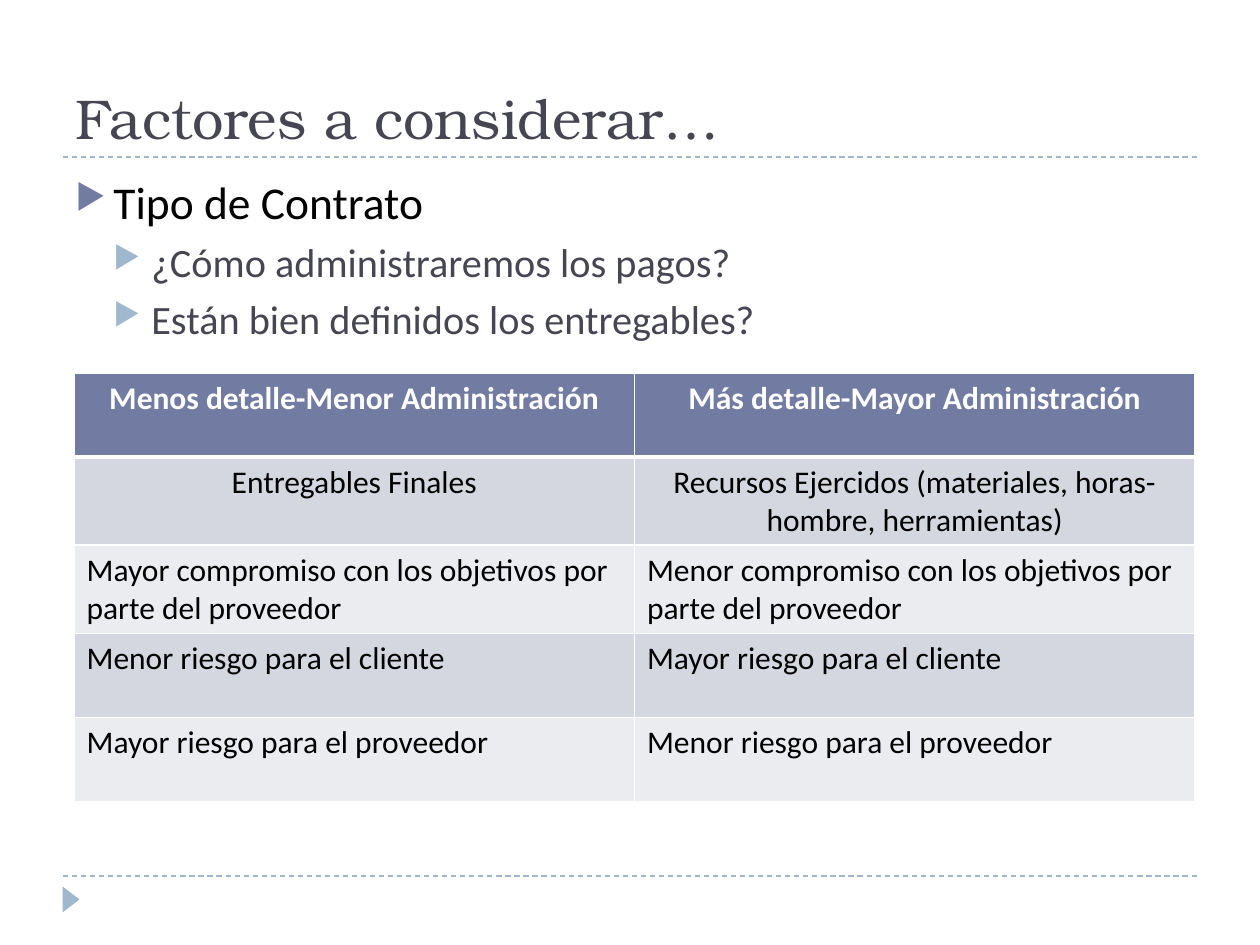
from lxml import etree
from pptx import Presentation
from pptx.dml.color import RGBColor
from pptx.enum.dml import MSO_LINE
from pptx.enum.shapes import MSO_CONNECTOR, MSO_SHAPE
from pptx.enum.text import MSO_ANCHOR, PP_ALIGN
from pptx.oxml.ns import qn
from pptx.util import Pt

EMU_PER_PX = 914400 / 126
STRAIGHT = MSO_CONNECTOR.STRAIGHT
TRIANGLE = MSO_SHAPE.ISOSCELES_TRIANGLE
DASH = MSO_LINE.DASH
BOTTOM = MSO_ANCHOR.BOTTOM
LEFT, CENTER = PP_ALIGN.LEFT, PP_ALIGN.CENTER
TITLE_ONLY = 5

INDIGO, SKY, SLATE = "727CA3", "9FB8CD", "464653"
BLACK, WHITE = "000000", "FFFFFF"
BANDS = ("D5D7E0", "EBECF0")


def px(value):
    return round(value * EMU_PER_PX)


def rgb(color):
    return RGBColor.from_string(color)


class SlideBuilder:
    heading_font = "TeX Gyre Bonum"
    body_font = "Calibri"

    def __init__(self, slide):
        self.slide = slide

    def style(self, paragraph, size, color, font=body_font, bold=False):
        paragraph.font.name = font
        paragraph.font.size = Pt(size)
        paragraph.font.bold = bold
        paragraph.font.color.rgb = rgb(color)

    def title(self, text, left, top, width, height):
        title = self.slide.shapes.title
        title.left, title.top = px(left), px(top)
        title.width, title.height = px(width), px(height)
        frame = title.text_frame
        frame.text = text
        frame.vertical_anchor = BOTTOM
        paragraph = frame.paragraphs[0]
        paragraph.alignment = LEFT
        self.style(paragraph, 32, SLATE, self.heading_font)

    def rule(self, left, right, y):
        rule = self.slide.shapes.add_connector(STRAIGHT, px(left), px(y), px(right), px(y))
        rule.line.color.rgb = rgb(SKY)
        rule.line.width = Pt(0.75)
        rule.line.dash_style = DASH
        etree.SubElement(rule._element.spPr, qn("a:effectLst"))

    def marker(self, left, top, width, height):
        marker = self.slide.shapes.add_shape(TRIANGLE, px(left), px(top), px(width), px(height))
        marker.rotation = 90
        marker.shadow.inherit = False
        marker.fill.solid()
        marker.fill.fore_color.rgb = rgb(SKY)
        marker.line.fill.background()

    def bullet(self, paragraph, color, indent):
        properties = paragraph._p.get_or_add_pPr()
        properties.set("marL", str(px(indent)))
        properties.set("indent", str(-px(38)))
        bullet_color = etree.SubElement(properties, qn("a:buClr"))
        etree.SubElement(bullet_color, qn("a:srgbClr"), val=color)
        etree.SubElement(properties, qn("a:buSzPct"), val="76000")
        etree.SubElement(properties, qn("a:buChar"), char="▶")

    def outline(self, items, left, top, width, height):
        levels = ((26, BLACK, INDIGO, 6), (23, SLATE, SKY, 5))
        box = self.slide.shapes.add_textbox(px(left), px(top), px(width), px(height))
        frame = box.text_frame
        frame.word_wrap = True
        for i, (level, text) in enumerate(items):
            paragraph = frame.add_paragraph() if i else frame.paragraphs[0]
            size, color, bullet_color, space = levels[level]
            paragraph.text = text
            paragraph.level = level
            paragraph.space_before = Pt(space)
            self.bullet(paragraph, bullet_color, 38 * (level + 1))
            self.style(paragraph, size, color)

    def borders(self, cell, top, bottom):
        properties = cell._tc.get_or_add_tcPr()
        sides = (("L", 1), ("R", 1), ("T", top), ("B", bottom))
        for i, (side, width) in enumerate(sides):
            line = etree.Element(qn(f"a:ln{side}"), w=str(Pt(width)))
            fill = etree.SubElement(line, qn("a:solidFill"))
            etree.SubElement(fill, qn("a:srgbClr"), val=WHITE)
            properties.insert(i, line)

    def table(self, rows, left, top, width, row_height, centered_rows):
        table = self.slide.shapes.add_table(
            len(rows), len(rows[0]), px(left), px(top), px(width), px(row_height * len(rows))
        ).table
        for r, texts in enumerate(rows):
            header = r == 0
            for c, text in enumerate(texts):
                cell = table.cell(r, c)
                cell.text = text
                cell.fill.solid()
                cell.fill.fore_color.rgb = rgb(INDIGO if header else BANDS[(r - 1) % 2])
                self.borders(cell, top=3 if r == 1 else 1, bottom=3 if header else 1)
                paragraph = cell.text_frame.paragraphs[0]
                paragraph.alignment = CENTER if r < centered_rows else LEFT
                self.style(paragraph, 18, WHITE if header else BLACK, bold=header)


def main():
    deck = Presentation()
    deck.slide_width, deck.slide_height = px(1260), px(945)
    page = SlideBuilder(deck.slides.add_slide(deck.slide_layouts[TITLE_ONLY]))

    # Frame: dashed rules and footer marker
    for y in (876, 157):
        page.rule(63, 1197, y)
    page.marker(58, 891, 26, 17)

    # Title and questions
    page.title("Factores a considerar…", 63, 21, 1134, 136)
    page.outline(
        [
            (0, "Tipo de Contrato"),
            (1, "¿Cómo administraremos los pagos?"),
            (1, "Están bien definidos los entregables?"),
        ],
        63, 168, 1134, 680,
    )

    # Comparison of contract types
    page.table(
        [
            ("Menos detalle-Menor Administración", "Más detalle-Mayor Administración"),
            ("Entregables Finales", "Recursos Ejercidos (materiales, horas-hombre, herramientas)"),
            ("Mayor compromiso con los objetivos por parte del proveedor",
             "Menor compromiso con los objetivos por parte del proveedor"),
            ("Menor riesgo para el cliente", "Mayor riesgo para el cliente"),
            ("Mayor riesgo para el proveedor", "Menor riesgo para el proveedor"),
        ],
        74, 373, 1121, 84, centered_rows=2,
    )

    deck.save("out.pptx")


if __name__ == "__main__":
    main()
